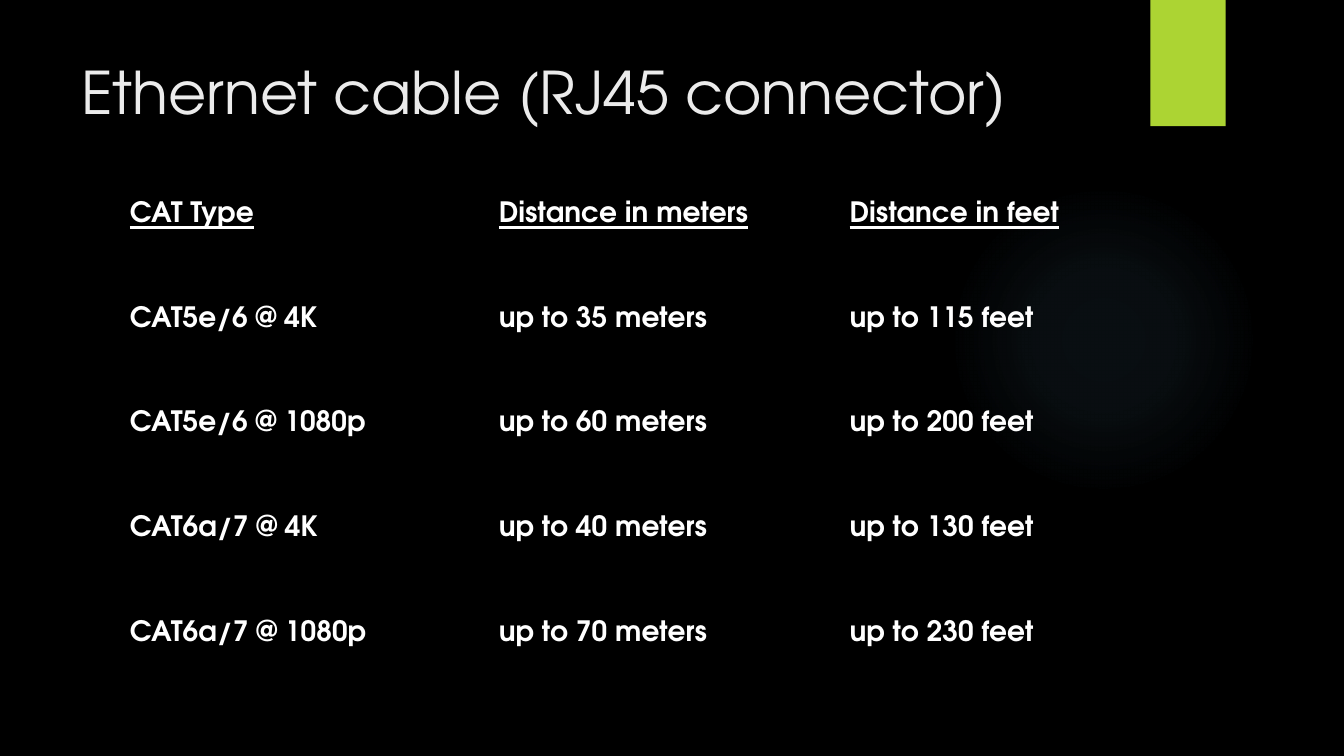
from lxml import etree
from pptx import Presentation
from pptx.dml.color import RGBColor
from pptx.enum import shapes, text
from pptx.oxml import ns
from pptx.util import Cm, Pt

FONT = "TeX Gyre Adventor"
NO_STYLE_NO_GRID = "{2D5ABB26-0587-4C30-8999-92F81FD0307C}"
GLOW_STOPS = [(0, 7), (36, 6), (69, 0)]  # position and opacity in percent
ROWS = [
    ("CAT Type", "Distance in meters", "Distance in feet"),
    ("CAT5e/6 @ 4K", "up to 35 meters", "up to 115 feet"),
    ("CAT5e/6 @ 1080p", "up to 60 meters", "up to 200 feet"),
    ("CAT6a/7 @ 4K", "up to 40 meters", "up to 130 feet"),
    ("CAT6a/7 @ 1080p", "up to 70 meters", "up to 230 feet"),
]
COL_WIDTHS = [9.3, 8.84, 9.63]
ROW_HEIGHT = 2.64


def rgb(value):
    return RGBColor.from_string(value)


def write(tf, content, color, **formats):
    """Put one formatted run into a text frame."""
    r = tf.paragraphs[0].add_run()
    r.text = content
    r.font.color.rgb = rgb(color)
    for name, value in {"name": FONT, **formats}.items():
        setattr(r.font, name, value)


prs = Presentation()
prs.slide_width, prs.slide_height = Cm(33.87), Cm(19.05)
s = prs.slides.add_slide(prs.slide_layouts[6])
s.background.fill.solid()
s.background.fill.fore_color.rgb = rgb("000000")

# Soft round glow
glow = s.shapes.add_shape(shapes.MSO_SHAPE.OVAL, Cm(23.9), Cm(4.65), Cm(7.82), Cm(7.82))
glow.shadow.inherit = False
glow.line.fill.background()
stops = "".join(
    f'<a:gs pos="{pos * 1000}"><a:srgbClr val="7AC4F0">'
    f'<a:alpha val="{alpha * 1000}"/></a:srgbClr></a:gs>'
    for pos, alpha in GLOW_STOPS
)
gradient = etree.fromstring(
    f'<a:gradFill {ns.nsdecls("a")}><a:gsLst>{stops}</a:gsLst><a:path path="circle">'
    '<a:fillToRect l="50000" t="50000" r="50000" b="50000"/></a:path></a:gradFill>'
)
glow.element.spPr.find(ns.qn("a:prstGeom")).addnext(gradient)

# Green tab at the top edge
tab = s.shapes.add_shape(shapes.MSO_SHAPE.RECTANGLE, Cm(28.99), 0, Cm(1.9), Cm(3.18))
tab.shadow.inherit = False
tab.line.fill.background()
tab.fill.solid()
tab.fill.fore_color.rgb = rgb("ACD433")

title = s.shapes.add_textbox(Cm(1.8), Cm(1.27), Cm(26.14), Cm(3.89))
title.text_frame.word_wrap = True
write(title.text_frame, "Ethernet cable (RJ45 connector)", "EBEBEB", size=Pt(42))

# Cable distances
frame = s.shapes.add_table(
    len(ROWS), len(COL_WIDTHS), Cm(3.07), Cm(4.09),
    Cm(sum(COL_WIDTHS)), Cm(ROW_HEIGHT * len(ROWS)),
)
table = frame.table
table.first_row = table.horz_banding = False
table._tbl.tblPr.find(ns.qn("a:tableStyleId")).text = NO_STYLE_NO_GRID
for column, width in zip(table.columns, COL_WIDTHS):
    column.width = Cm(width)
for i, labels in enumerate(ROWS):
    table.rows[i].height = Cm(ROW_HEIGHT)
    for j, label in enumerate(labels):
        cell = table.cell(i, j)
        cell.fill.background()
        cell.vertical_anchor = text.MSO_ANCHOR.MIDDLE
        cell.margin_left = cell.margin_right = Cm(0.2)
        cell.margin_top = cell.margin_bottom = Cm(0.1)
        write(cell.text_frame, label, "FFFFFF", size=Pt(20), bold=True, underline=i == 0)

prs.save("out.pptx")
